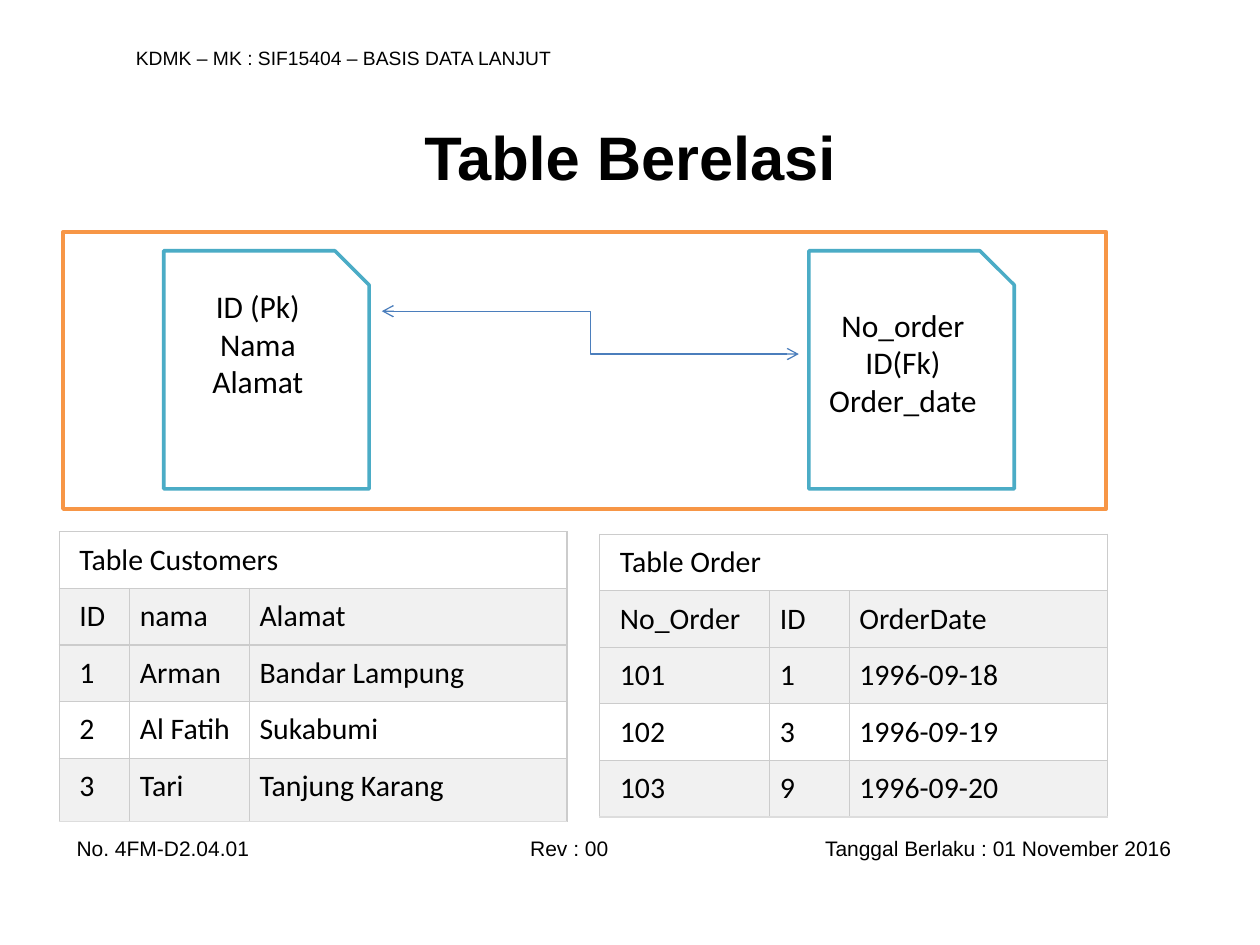
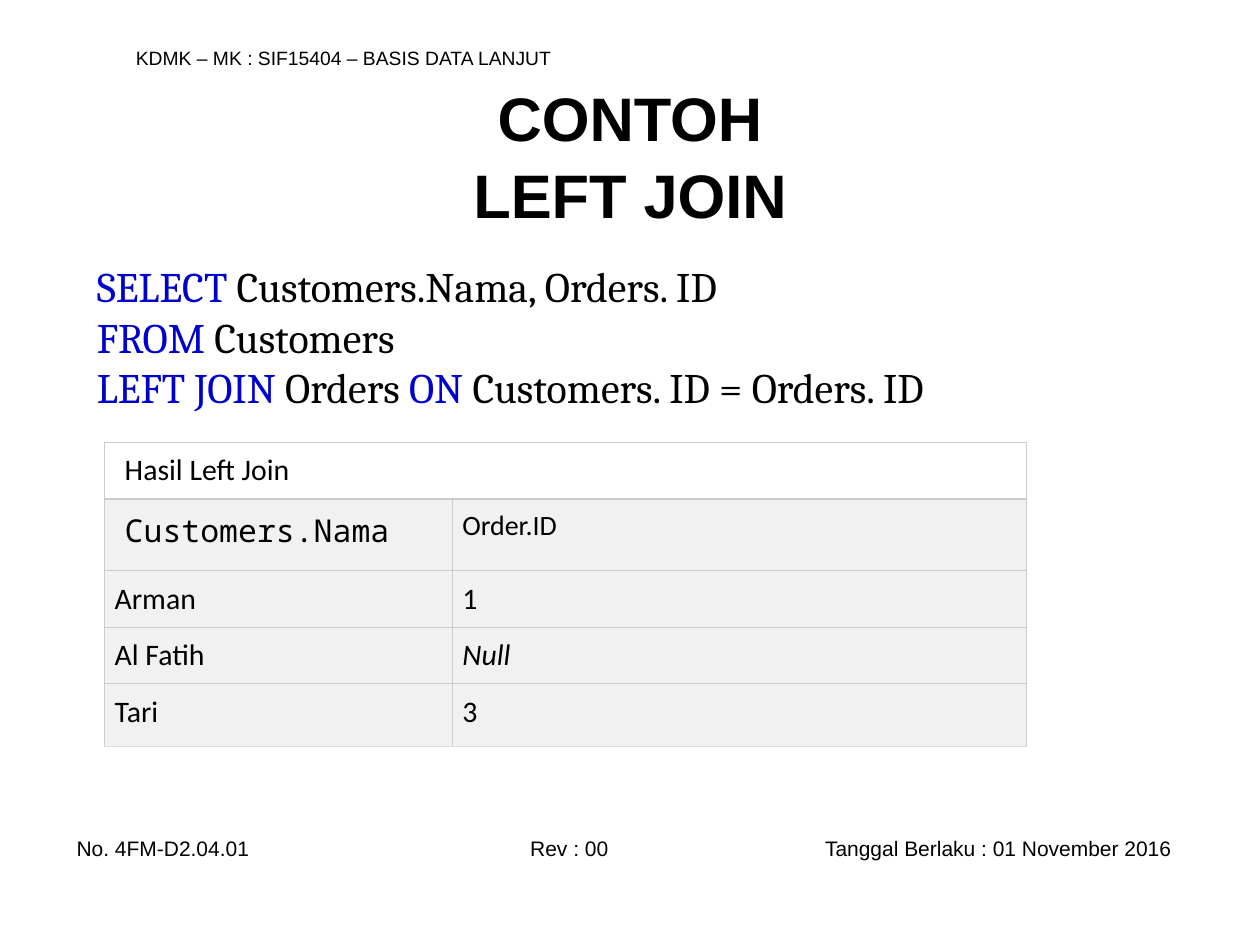
from lxml import etree
from pptx import Presentation
from pptx.dml.color import RGBColor
from pptx.enum.shapes import MSO_CONNECTOR, MSO_SHAPE
from pptx.enum.text import MSO_ANCHOR, MSO_AUTO_SIZE, PP_ALIGN
from pptx.oxml.ns import qn
from pptx.util import Inches, Pt

RECT, SNIP = MSO_SHAPE.RECTANGLE, MSO_SHAPE.SNIP_1_RECTANGLE
ELBOW = MSO_CONNECTOR.ELBOW
TOP, MIDDLE = MSO_ANCHOR.TOP, MSO_ANCHOR.MIDDLE
LEFT, CENTER = PP_ALIGN.LEFT, PP_ALIGN.CENTER
NO_FIT = MSO_AUTO_SIZE.NONE

BLACK, WHITE, GREY = "000000", "FFFFFF", "F1F1F1"
ORANGE, TEAL, STEEL, BLUE = "F79646", "4BACC6", "4B7EBC", "0000CD"
EDGE, BASE = "CCCCCC", "DDDDDD"
HEAD = {"name": "Arial", "size": Pt(11)}
FOOT = {"name": "Arial", "size": Pt(12)}
TITLE = {"name": "Arial", "size": Pt(35.1), "bold": True}
NODE = {"name": "Calibri", "size": Pt(18)}
CELL = {"name": "Calibri", "size": Pt(17)}
CODE = {"name": "Cambria", "size": Pt(24)}


def color(code):
    return RGBColor.from_string(code)


def inches(*values):
    return [Inches(value) for value in values]


def style(font, form, tint=BLACK):
    for name, value in form.items():
        setattr(font, name, value)
    font.color.rgb = color(tint)


def write(frame, lines, form, align=LEFT, anchor=MIDDLE):
    """Fill a frame; a line is a list of (text, colour) runs."""
    frame.word_wrap, frame.auto_size = True, NO_FIT
    frame.vertical_anchor = anchor
    for i, line in enumerate(lines):
        para = frame.paragraphs[0] if i == 0 else frame.add_paragraph()
        para.alignment = align
        for text, tint in line:
            run = para.add_run()
            run.text = text
            style(run.font, form, tint)


def plain(*lines):
    return [[(line, BLACK)] for line in lines]


def add_text(slide, box, lines, form, anchor=MIDDLE):
    frame = slide.shapes.add_textbox(*inches(*box)).text_frame
    write(frame, lines, form, anchor=anchor)
    return frame


def add_tabs(para, stops):
    tabs = etree.SubElement(para._p.get_or_add_pPr(), qn("a:tabLst"))
    for stop in stops:
        etree.SubElement(tabs, qn("a:tab"), pos=str(Inches(stop)), algn="l")


def add_page(deck, *title):
    """Add a slide with its title, header and footer."""
    slide = deck.slides.add_slide(deck.slide_layouts[5])
    add_text(slide, (0.98, 0.31, 8.35, 0.29),
             plain("KDMK – MK : SIF15404 – BASIS DATA LANJUT"), HEAD)
    foot = add_text(slide, (0.51, 6.58, 9.2, 0.3), plain(
        "No. 4FM-D2.04.01\tRev : 00\tTanggal Berlaku : 01 November 2016"), FOOT)
    add_tabs(foot.paragraphs[0], (3.6, 5.94))
    head = slide.shapes.title
    head.left, head.top, head.width, head.height = inches(0.5, 0.61, 9, 1.25)
    write(head.text_frame, plain(*title), TITLE, CENTER)
    for para in head.text_frame.paragraphs[1:]:
        para.space_before = Pt(2)
    return slide


def add_edges(cell, last):
    props = cell._tc.get_or_add_tcPr()
    for side in "LRTB":
        line = etree.SubElement(props, qn("a:ln" + side), w=str(Pt(0.75)))
        fill = etree.SubElement(line, qn("a:solidFill"))
        tint = BASE if last and side == "B" else EDGE
        etree.SubElement(fill, qn("a:srgbClr"), val=tint)


def add_grid(slide, spot, cols, rows, data, white=(0,), inset=5, forms=None):
    """Add a table whose first row is one merged caption.

    white lists the white rows, inset counts the rows with a deeper
    left margin, and forms maps (row, column) to extra font values.
    """
    forms = forms or {}
    box = inches(*spot, sum(cols), sum(rows))
    table = slide.shapes.add_table(len(rows), len(cols), *box).table
    table.first_row = table.horz_banding = False
    for col, width in zip(table.columns, cols):
        col.width = Inches(width)
    for row, height in zip(table.rows, rows):
        row.height = Inches(height)
    for r in range(len(rows)):
        for c in range(len(cols)):
            cell = table.cell(r, c)
            add_edges(cell, r == len(rows) - 1)
            cell.fill.solid()
            cell.fill.fore_color.rgb = color(WHITE if r in white else GREY)
            deep = c == 0 and r < inset
            cell.margin_left = Inches(0.16 if deep else 0.08)
            cell.margin_right = cell.margin_top = cell.margin_bottom = Inches(0.08)
            if c < len(data[r]):
                run = cell.text_frame.paragraphs[0].add_run()
                run.text = data[r][c]
                style(run.font, CELL | forms.get((r, c), {}))
    table.cell(0, 0).merge(table.cell(0, len(cols) - 1))


def add_box(group, kind, box, tint):
    shape = group.shapes.add_shape(kind, *inches(*box))
    shape.shadow.inherit = False
    shape.fill.solid()
    shape.fill.fore_color.rgb = color(WHITE)
    shape.line.color.rgb = color(tint)
    shape.line.width = Pt(2)
    return shape


def add_node(group, left, drop, *fields):
    """Add an entity card whose fields start drop inches down."""
    frame = add_box(group, SNIP, (left, 1.99, 1.63, 1.89), TEAL).text_frame
    frame.margin_top = Inches(drop)
    write(frame, plain(*fields), NODE, CENTER, TOP)


def add_link(group, *ends):
    link = group.shapes.add_connector(ELBOW, *inches(*ends))
    link.line.color.rgb = color(STEEL)
    link.line.width = Pt(0.75)
    props = link._element.spPr
    line = props.find(qn("a:ln"))
    for end in ("a:headEnd", "a:tailEnd"):
        etree.SubElement(line, qn(end), type="arrow")
    etree.SubElement(props, qn("a:effectLst"))


def draw_tables(deck):
    slide = add_page(deck, "Table Berelasi")
    add_grid(slide, (0.47, 4.22), (0.56, 0.95, 2.52),
             (0.45, 0.44, 0.44, 0.44, 0.5), [
                 ["Table Customers"],
                 ["ID", "nama", "Alamat"],
                 ["1", "Arman", "Bandar Lampung"],
                 ["2", "Al Fatih", "Sukabumi"],
                 ["3", "Tari", "Tanjung Karang"]], white=(0, 3))
    add_grid(slide, (4.76, 4.24), (1.35, 0.63, 2.05), [0.44] * 5, [
        ["Table Order"],
        ["No_Order", "ID", "OrderDate"],
        ["101", "1", "1996-09-18"],
        ["102", "3", "1996-09-19"],
        ["103", "9", "1996-09-20"]], white=(0, 3))
    group = slide.shapes.add_group_shape()
    add_box(group, RECT, (0.5, 1.84, 8.28, 2.2), ORANGE)
    add_node(group, 1.3, 0.15, "ID (Pk)", "Nama", "Alamat")
    add_node(group, 6.42, 0.3, "No_order", "ID(Fk)", "Order_date")
    add_link(group, 3.03, 2.47, 6.34, 2.81)


def draw_join(deck):
    slide = add_page(deck, "CONTOH", "LEFT JOIN")
    add_text(slide, (0.67, 2.02, 8.66, 1.31), [
        [("SELECT ", BLUE), ("Customers.Nama, Orders. ID", BLACK)],
        [("FROM", BLUE), (" Customers", BLACK)],
        [("LEFT JOIN", BLUE), (" Orders ", BLACK), ("ON", BLUE),
         (" Customers. ID = Orders. ID", BLACK)]], CODE, TOP)
    add_grid(slide, (0.83, 3.51), (2.76, 4.56),
             (0.45, 0.57, 0.44, 0.44, 0.5), [
                 ["Hasil Left Join"],
                 ["Customers.Nama", "Order.ID"],
                 ["Arman", "1"],
                 ["Al Fatih", "Null"],
                 ["Tari", "3"]], inset=2, forms={
                     (1, 0): {"name": "Noto Sans Mono", "size": Pt(18)},
                     (1, 1): {"size": Pt(16)},
                     (3, 1): {"italic": True}})


def main():
    deck = Presentation()
    deck.slide_width, deck.slide_height = inches(10, 7.5)
    draw_tables(deck)
    draw_join(deck)
    deck.save("out.pptx")


if __name__ == "__main__":
    main()
